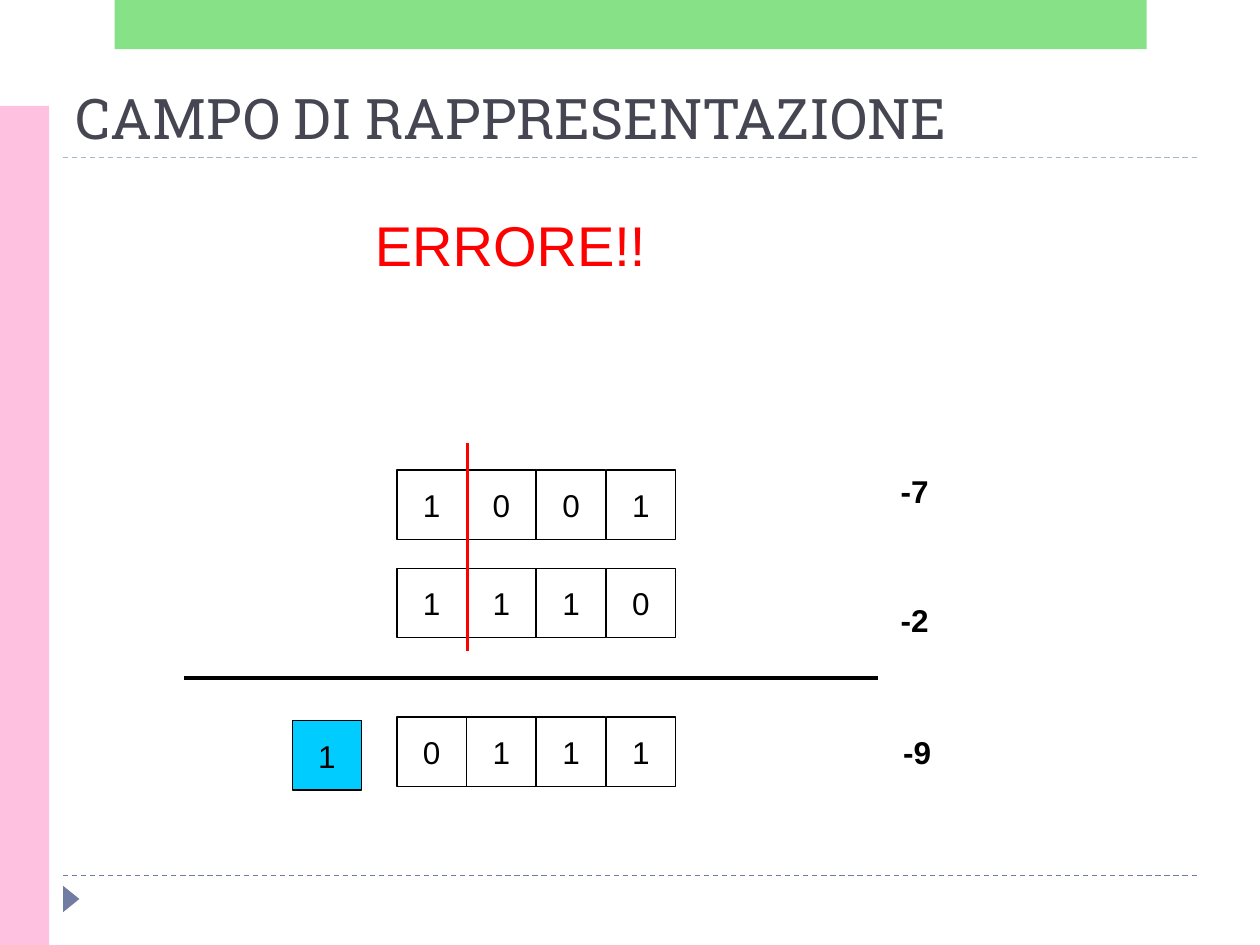
from lxml.etree import SubElement
from pptx import Presentation
from pptx.dml.color import RGBColor
from pptx.enum.dml import MSO_LINE
from pptx.enum.shapes import MSO_CONNECTOR, MSO_SHAPE
from pptx.enum.text import MSO_ANCHOR, PP_ALIGN
from pptx.oxml.ns import qn
from pptx.util import Inches, Pt

COLORS = {
    "white": "FFFFFF", "black": "000000", "red": "FF0000", "cyan": "00CCFF",
    "pink": "FFC1E0", "green": "62D862", "slate": "727CA3",
    "light_blue": "9FB8CD", "title": "464653",
}
CELL = 0.55
CELL_PITCH = 0.554
CELL_FORMAT = {"size": Pt(18), "name": "Arial"}
LABEL_FORMAT = {"size": Pt(18), "name": "Arial", "bold": True}
ERROR_FORMAT = {"size": Pt(32), "name": "Arial"}
TITLE_FORMAT = {"size": Pt(32), "name": "Roboto Slab", "bold": False}


def rgb(name):
    return RGBColor.from_string(COLORS[name])


def write_text(shape, text, formats, color, alignment, anchor, wrap=True):
    frame = shape.text_frame
    frame.word_wrap = wrap
    frame.vertical_anchor = anchor
    paragraph = frame.paragraphs[0]
    paragraph.alignment = alignment
    run = paragraph.add_run()
    run.text = text
    for attribute, value in formats.items():
        setattr(run.font, attribute, value)
    run.font.color.rgb = rgb(color)


def add_block(shapes, kind, box, fill, outline=None):
    shape = shapes.add_shape(kind, *map(Inches, box))
    shape.shadow.inherit = False
    shape.fill.solid()
    shape.fill.fore_color.rgb = rgb(fill)
    if outline:
        shape.line.color.rgb = rgb(outline)
        shape.line.width = Pt(0.75)
    else:
        shape.line.fill.background()
    return shape


def add_line(shapes, start, end, color, width, dash=None):
    line = shapes.add_connector(MSO_CONNECTOR.STRAIGHT, *map(Inches, start + end))
    line.line.color.rgb = rgb(color)
    line.line.width = Pt(width)
    if dash:
        line.line.dash_style = dash
    SubElement(line._element.spPr, qn("a:effectLst"))


def add_text(shapes, text, box, formats, color, alignment):
    text_box = shapes.add_textbox(*map(Inches, box))
    write_text(text_box, text, formats, color, alignment, MSO_ANCHOR.TOP)


def add_decoration(shapes):
    """Dashed rules, page marker and the two coloured bands."""
    for top, color in ((6.95, "slate"), (1.25, "light_blue")):
        add_line(shapes, (0.5, top), (9.5, top), color, 0.75, MSO_LINE.DASH)
    marker = add_block(shapes, MSO_SHAPE.ISOSCELES_TRIANGLE,
                       (0.46, 7.07, 0.21, 0.13), "slate")
    marker.rotation = 90
    add_block(shapes, MSO_SHAPE.RECTANGLE, (0, 0.84, 0.39, 6.66), "pink")
    band = add_block(shapes, MSO_SHAPE.RECTANGLE, (0.91, 0, 8.19, 0.39), "green")
    fill_color = band._element.spPr.find(qn("a:solidFill"))[0]
    SubElement(fill_color, qn("a:alpha"), val="76000")


def add_title(slide, text, box):
    title = slide.shapes.title
    title.left, title.top, title.width, title.height = map(Inches, box)
    write_text(title, text, TITLE_FORMAT, "title", PP_ALIGN.LEFT, MSO_ANCHOR.BOTTOM)


def add_cell(shapes, digit, left, top, fill="white"):
    cell = add_block(shapes, MSO_SHAPE.RECTANGLE, (left, top, CELL, CELL), fill, "black")
    write_text(cell, digit, CELL_FORMAT, "black", PP_ALIGN.CENTER,
               MSO_ANCHOR.MIDDLE, wrap=False)


def add_binary_number(shapes, digits, left, top):
    group = shapes.add_group_shape()
    for index, digit in enumerate(digits):
        add_cell(group.shapes, digit, left + index * CELL_PITCH, top)


def add_sum(shapes, left, top):
    """Binary addition with decimal values, sign divider and carry bit."""
    rows = (("1001", 0, "-7", 3.9, -0.03),
            ("1110", 0.78, "-2", 3.9, 0.99),
            ("0111", 1.96, "-9", 3.92, 2.04))
    for digits, row_top, value, value_left, value_top in rows:
        add_binary_number(shapes, digits, left, top + row_top)
        add_text(shapes, value, (left + value_left, top + value_top, 0.61, 0.5),
                 LABEL_FORMAT, "black", PP_ALIGN.LEFT)
    add_line(shapes, (left - 1.69, top + 1.65), (left + 3.82, top + 1.65), "black", 2)
    add_line(shapes, (left + 0.56, top - 0.21), (left + 0.56, top + 1.44), "red", 2)
    add_cell(shapes, "1", left - 0.83, top + 1.99, "cyan")


def main():
    presentation = Presentation()
    presentation.slide_width, presentation.slide_height = Inches(10), Inches(7.5)
    slide = presentation.slides.add_slide(presentation.slide_layouts[5])
    add_decoration(slide.shapes)
    add_title(slide, "CAMPO DI RAPPRESENTAZIONE", (0.5, 0.55, 9, 0.7))
    add_sum(slide.shapes, 3.15, 3.73)
    add_text(slide.shapes, "ERRORE!!", (1.06, 1.62, 5.98, 0.64),
             ERROR_FORMAT, "red", PP_ALIGN.CENTER)
    presentation.save("out.pptx")


if __name__ == "__main__":
    main()
